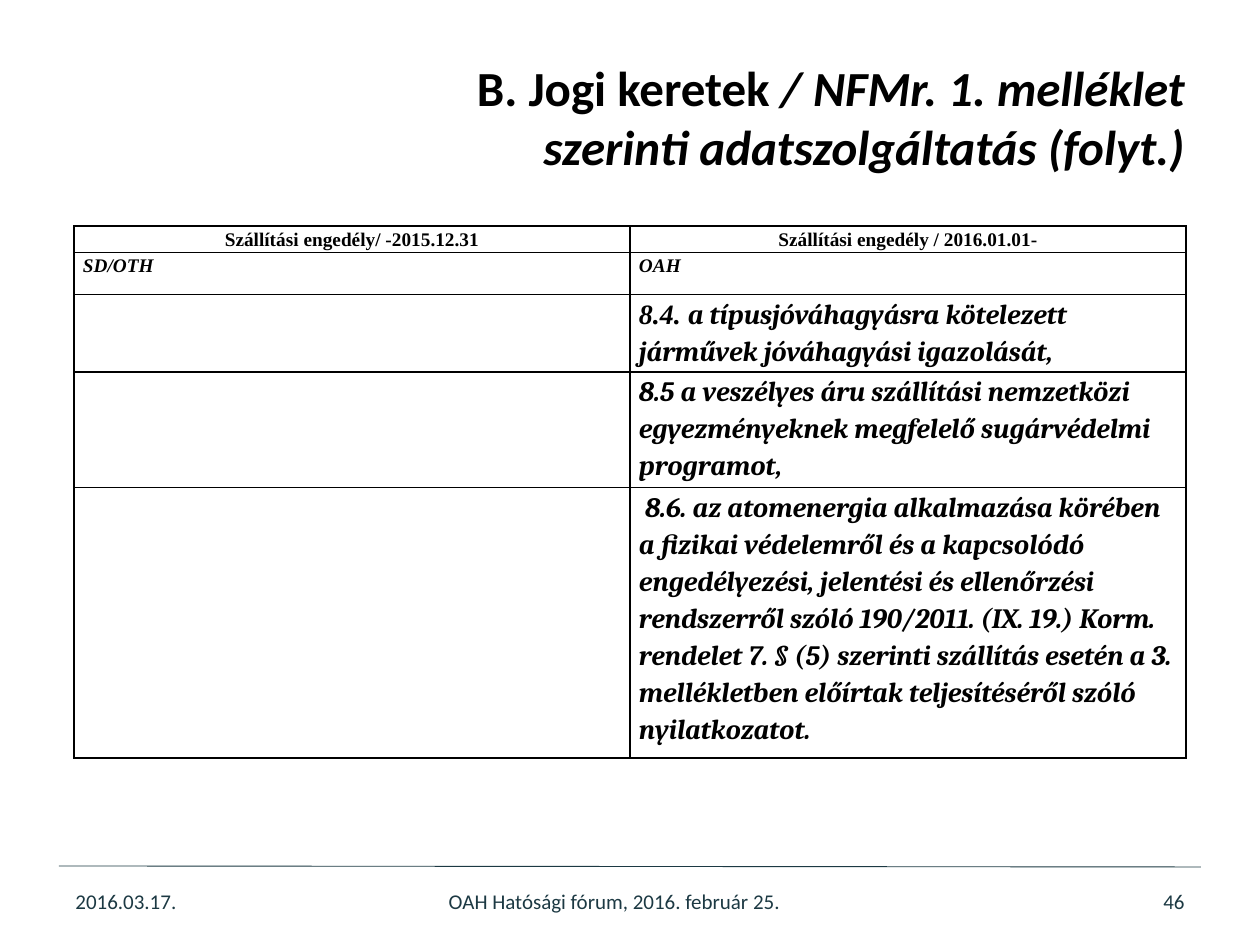
from dataclasses import dataclass

from lxml.etree import SubElement
from pptx import Presentation
from pptx.dml.color import RGBColor as Rgb
from pptx.enum.shapes import MSO_CONNECTOR as Conn
from pptx.enum.text import MSO_ANCHOR as Anchor, PP_ALIGN as Align
from pptx.oxml.ns import qn
from pptx.util import Pt


@dataclass(frozen=True)
class Theme:
    black: str = "000000"
    slate: str = "1C3943"
    sans: str = "Calibri"
    roman: str = "Times New Roman"
    serif: str = "Cambria"
    title: int = 28
    body: int = 16
    foot: int = 12
    head: int = 11


def px(n):
    return round(n * 914400 / 126)


class Deck:
    def __init__(self, theme):
        self.theme = theme
        self.prs = Presentation()
        self.prs.slide_width, self.prs.slide_height = px(1260), px(945)
        self.slide = self.prs.slides.add_slide(self.prs.slide_layouts[6])

    def run(self, para, text, size, face, color, bold=False, slant=False):
        run = para.add_run()
        run.text = text
        font = run.font
        font.size, font.name = Pt(size), face
        font.bold, font.italic = bold, slant
        font.color.rgb = Rgb.from_string(color)

    def text(self, box, runs, align):
        """Add a text box; each run is text, size, face, color, bold, slant."""
        frame = self.slide.shapes.add_textbox(*map(px, box)).text_frame
        frame.word_wrap = True
        frame.vertical_anchor = Anchor.MIDDLE
        para = frame.paragraphs[0]
        para.alignment = align
        for run in runs:
            self.run(para, *run)

    def line(self, x1, y1, x2, y2, color, width):
        line = self.slide.shapes.add_connector(
            Conn.STRAIGHT, px(x1), px(y1), px(x2), px(y2))
        line.line.color.rgb = Rgb.from_string(color)
        line.line.width = Pt(width)
        SubElement(line._element.spPr, qn("a:effectLst"))

    def edge(self, cell, color, width):
        """Draw all four borders of a cell."""
        props = cell._tc.get_or_add_tcPr()
        for side in ("lnL", "lnR", "lnT", "lnB"):
            line = SubElement(props, qn(f"a:{side}"), w=str(Pt(width)))
            fill = SubElement(line, qn("a:solidFill"))
            SubElement(fill, qn("a:srgbClr"), val=color)

    def table(self, left, top, wide, rows):
        """Each row is a height, an alignment and a list of runs per cell."""
        cols = len(rows[0][2])
        high = sum(row[0] for row in rows)
        table = self.slide.shapes.add_table(
            len(rows), cols, px(left), px(top), px(wide * cols), px(high)).table
        table.first_row = table.horz_banding = False
        for col in table.columns:
            col.width = px(wide)
        for row, (high, align, cells) in zip(table.rows, rows):
            row.height = px(high)
            for cell, runs in zip(row.cells, cells):
                cell.margin_left = cell.margin_right = px(9)
                cell.margin_top = cell.margin_bottom = 0
                self.edge(cell, self.theme.black, 1)
                cell.fill.background()
                para = cell.text_frame.paragraphs[0]
                para.alignment, para.line_spacing = align, 1.15
                for run in runs:
                    self.run(para, *run)


def main():
    look = Theme()
    deck = Deck(look)

    deck.line(59, 866, 1201, 867, look.slate, 0.5)
    title = (look.title, look.sans, look.black, True)
    deck.text((384, 38, 813, 157), [
        ("B. Jogi keretek", *title),
        (" / NFMr. 1. melléklet szerinti adatszolgáltatás (folyt.)", *title, True),
    ], Align.RIGHT)

    for left, wide, text, align in (
            (63, 294, "2016.03.17.", Align.LEFT),
            (282, 665, "OAH Hatósági fórum, 2016. február 25.", Align.CENTER),
            (903, 294, "46", Align.RIGHT)):
        deck.text((left, 876, wide, 50),
                  [(text, look.foot, look.sans, look.slate)], align)

    def head(text, slant=False):
        return [(text, look.head, look.roman, look.black, True, slant)]

    def item(text, face=look.serif):
        return (text, look.body, face, look.black, True, True)

    deck.table(74, 226, 556, [
        (25, Align.CENTER, [head("Szállítási engedély/ -2015.12.31"),
                            head("Szállítási engedély / 2016.01.01-")]),
        (42, Align.LEFT, [head("SD/OTH", True), head("OAH", True)]),
        (74, Align.LEFT, [[], [
            item("8.4. ", look.roman),
            item("a típusjóváhagyásra kötelezett járművek jóváhagyási "
                 "igazolását,")]]),
        (111, Align.LEFT, [[], [
            item("8.5 a veszélyes áru szállítási nemzetközi egyezményeknek "
                 "megfelelő sugárvédelmi programot,")]]),
        (259, Align.LEFT, [[], [
            item(" 8.6. az atomenergia alkalmazása körében a fizikai "
                 "védelemről és a kapcsolódó engedélyezési, jelentési és "
                 "ellenőrzési rendszerről szóló 190/2011. (IX. 19.) Korm. "
                 "rendelet 7. § (5) szerinti szállítás esetén a 3. "
                 "mellékletben előírtak teljesítéséről szóló "
                 "nyilatkozatot.")]]),
    ])
    deck.prs.save("out.pptx")


if __name__ == "__main__":
    main()
